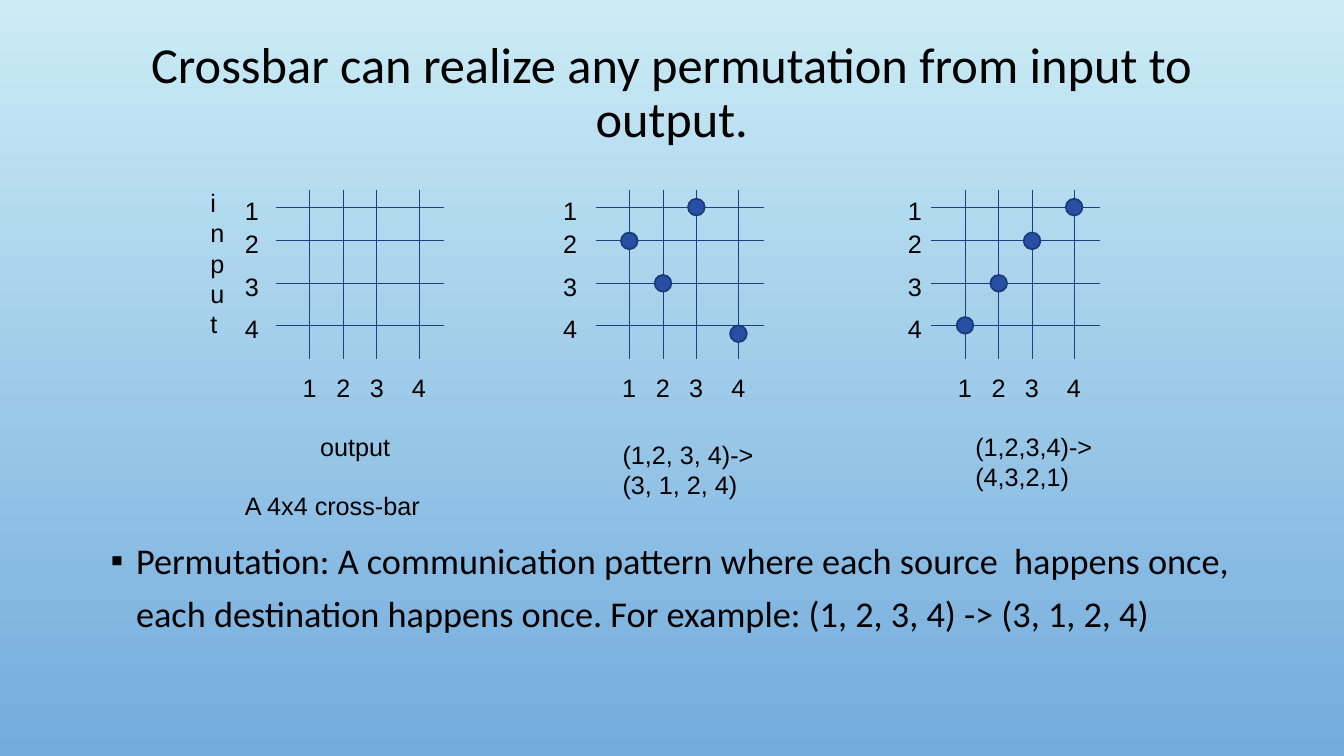
from lxml.etree import SubElement
from pptx import Presentation
from pptx.dml.color import RGBColor
from pptx.enum.shapes import MSO_CONNECTOR, MSO_SHAPE
from pptx.enum.text import MSO_ANCHOR, PP_ALIGN
from pptx.oxml.ns import qn
from pptx.util import Cm, Pt

BLACK = "000000"
GRID_TOP = 4.8
GRID_SIZE = 4.24
ROW_OFFSETS = (0.42, 1.27, 2.34, 3.4)
COLUMN_OFFSETS = (0.85, 1.7, 2.54, 3.6)
DOT_SIZE = 0.42
LABEL_WIDTH = 0.86
LABEL_HEIGHT = 1.02


def set_color(color_format, hex_color):
    color_format.rgb = RGBColor.from_string(hex_color)


def set_background(slide, top_color, bottom_color):
    fill = slide.background.fill
    fill.gradient()
    fill.gradient_angle = 270
    for stop, position, color in zip(fill.gradient_stops, (0, 1), (top_color, bottom_color)):
        stop.position = position
        set_color(stop.color, color)


def add_text(slide, lines, left, top, width, height, size=18, font="Arial", wrap=False):
    box = slide.shapes.add_textbox(Cm(left), Cm(top), Cm(width), Cm(height))
    frame = box.text_frame
    frame.word_wrap = wrap
    frame.text = "\n".join(lines)
    for paragraph in frame.paragraphs:
        paragraph.font.size = Pt(size)
        paragraph.font.name = font
        set_color(paragraph.font.color, BLACK)
    return frame


def add_title(slide, text):
    frame = add_text(slide, [text], 2.54, 0.81, 28.78, 3.12, 36, "Calibri", True)
    frame.vertical_anchor = MSO_ANCHOR.MIDDLE
    frame.paragraphs[0].alignment = PP_ALIGN.CENTER
    frame.paragraphs[0].line_spacing = 0.9


def add_bullet(slide, text):
    frame = add_text(slide, [], 2.54, 13.23, 29.11, 3.94, wrap=True)
    paragraph = frame.paragraphs[0]
    paragraph.text = text
    paragraph.line_spacing = 1.2
    properties = paragraph._p.get_or_add_pPr()
    properties.set("marL", str(Cm(0.64)))
    properties.set("indent", str(Cm(-0.64)))
    bullet_color = SubElement(properties, qn("a:buClr"))
    SubElement(bullet_color, qn("a:srgbClr"), val=BLACK)
    SubElement(properties, qn("a:buFont"), typeface="Arial")
    SubElement(properties, qn("a:buChar"), char="▪")
    paragraph.font.size = Pt(25.9)
    paragraph.font.name = "Calibri"
    set_color(paragraph.font.color, BLACK)


def add_line(slide, x1, y1, x2, y2):
    line = slide.shapes.add_connector(MSO_CONNECTOR.STRAIGHT, Cm(x1), Cm(y1), Cm(x2), Cm(y2))
    line.line.width = Pt(0.75)
    set_color(line.line.color, "1F3F83")
    SubElement(line._element.spPr, qn("a:effectLst"))


def add_dot(slide, x, y):
    dot = slide.shapes.add_shape(
        MSO_SHAPE.OVAL, Cm(x - DOT_SIZE / 2), Cm(y - DOT_SIZE / 2), Cm(DOT_SIZE), Cm(DOT_SIZE))
    dot.shadow.inherit = False
    dot.fill.solid()
    set_color(dot.fill.fore_color, "274FA4")
    dot.line.width = Pt(1.25)
    set_color(dot.line.color, "1D3A79")


def add_crossbar(slide, left, label_left, outputs=(), last_drop=0):
    """Draw a numbered grid; outputs gives the output joined to each input."""
    rows = [GRID_TOP + offset for offset in ROW_OFFSETS]
    columns = [left + offset for offset in COLUMN_OFFSETS]
    for number, (x, y) in enumerate(zip(columns, rows), 1):
        add_line(slide, left, y, left + GRID_SIZE, y)
        add_line(slide, x, GRID_TOP, x, GRID_TOP + GRID_SIZE)
        add_text(slide, [str(number)], label_left, y - 0.43, LABEL_WIDTH, LABEL_HEIGHT)
        add_text(slide, [str(number)], x - 0.43, 9.25, LABEL_WIDTH, LABEL_HEIGHT)
    for y, output in zip(rows, outputs):
        drop = last_drop if y == rows[-1] else 0
        add_dot(slide, columns[output - 1], y + drop)


def main():
    presentation = Presentation()
    presentation.slide_width = Cm(33.87)
    presentation.slide_height = Cm(19.05)
    slide = presentation.slides.add_slide(presentation.slide_layouts[6])
    set_background(slide, "CBECF5", "73ABDD")
    add_title(slide, "Crossbar can realize any permutation from input to output.")

    # Empty crossbar with its axis names
    add_crossbar(slide, 6.96, 5.92)
    add_text(slide, "input", 5.05, 4.6, LABEL_WIDTH, 4.11)
    add_text(slide, ["output"], 7.82, 10.74, 2.29, LABEL_HEIGHT)
    add_text(slide, ["A 4x4 cross-bar"], 5.92, 12.22, 4.95, LABEL_HEIGHT)

    # Two crossbars set to a permutation
    add_crossbar(slide, 15.01, 13.94, (3, 1, 2, 4), last_drop=0.21)
    add_text(slide, ["(1,2, 3, 4)->", "(3, 1, 2, 4)"], 15.44, 10.95, 3.84, 1.8)
    add_crossbar(slide, 23.47, 22.63, (4, 3, 2, 1))
    add_text(slide, ["(1,2,3,4)->", "(4,3,2,1)"], 24.33, 10.74, 3.48, 1.8)

    # Definition
    add_bullet(slide, "Permutation: A communication pattern where each source  happens once, "
                      "each destination happens once. For example: (1, 2, 3, 4) -> (3, 1, 2, 4)")
    presentation.save("out.pptx")


if __name__ == "__main__":
    main()
